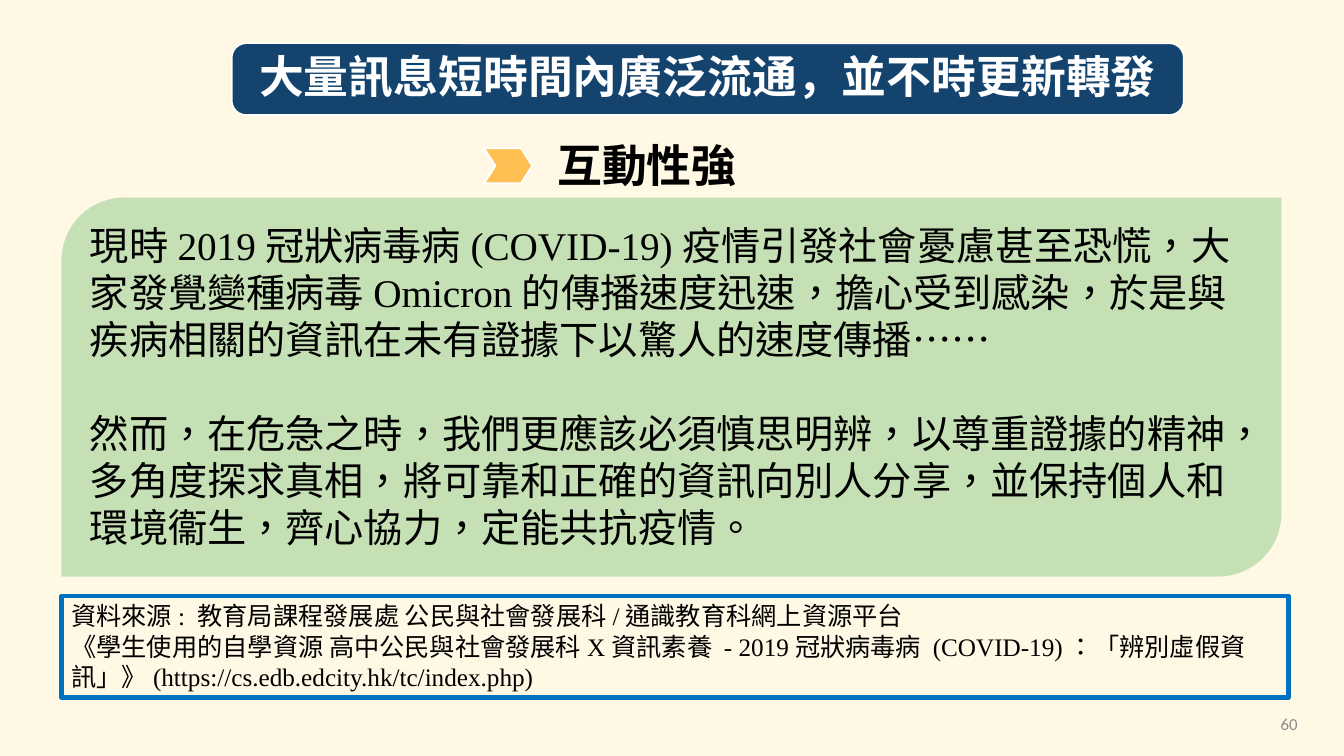
import pptx
import pptx.dml.color
import pptx.enum.lang
import pptx.enum.shapes
import pptx.enum.text
import pptx.util

RGBColor = pptx.dml.color.RGBColor
Inches = pptx.util.Inches
Pt = pptx.util.Pt
Shapes = pptx.enum.shapes.MSO_SHAPE
Align = pptx.enum.text.PP_ALIGN
Anchor = pptx.enum.text.MSO_ANCHOR
HONG_KONG = pptx.enum.lang.MSO_LANGUAGE_ID.CHINESE_HONG_KONG_SAR

CREAM = RGBColor(0xFF, 0xF8, 0xE5)
NAVY = RGBColor(0x14, 0x44, 0x6E)
GREEN = RGBColor(0xC5, 0xE0, 0xB4)
AMBER = RGBColor(0xFF, 0xBF, 0x53)
BLUE = RGBColor(0x00, 0x70, 0xC0)
GREY = RGBColor(0x8C, 0x8C, 0x8C)
WHITE = RGBColor(0xFF, 0xFF, 0xFF)
BLACK = RGBColor(0, 0, 0)

SANS, SERIF = "Lato", "Times New Roman"
LEFT_MARGIN = 0.61

SITUATION = [
    ("現時", SANS),
    ("2019冠狀病毒病(COVID-19)疫情引發社會憂慮甚至恐慌，大家發覺變種病毒Omicron的傳播速度迅速，擔心受到", SERIF),
    ("感染，於是與疾病相關的資訊在未有證據下以驚人的速度傳播……", SANS),
]
ADVICE = [("然而，在危急之時，我們更應該必須慎思明辨，以尊重證據的精神，多角度探求真相，"
           "將可靠和正確的資訊向別人分享，並保持個人和環境衞生，齊心協力，定能共抗疫情。", SANS)]
SOURCES = [
    [("資料來源: 教育局課程發展處 公民與社會發展科/通識教育科網上資源平台", SERIF)],
    [("《學生使用的自學資源 高中公民與社會發展科X資訊素養 - 2019冠狀病毒病 (COVID-19)：「辨別虛假資訊」》"
      "(https://cs.edb.edcity.hk/tc/index.php)", SERIF)],
]


def write(shape, paragraphs, size, color=BLACK, bold=False, align=Align.LEFT,
          anchor=Anchor.TOP, gap=0, line_spacing=None, margins=(0.1, 0.05),
          language=None):
    """Fill a shape with paragraphs, each a list of (text, font name) runs."""
    frame = shape.text_frame
    frame.word_wrap = True
    frame.auto_size = pptx.enum.text.MSO_AUTO_SIZE.NONE
    frame.vertical_anchor = anchor
    frame.margin_left = frame.margin_right = Inches(margins[0])
    frame.margin_top = frame.margin_bottom = Inches(margins[1])
    for index, runs in enumerate(paragraphs):
        paragraph = frame.add_paragraph() if index else frame.paragraphs[0]
        paragraph.alignment = align
        paragraph.space_before = Pt(gap if index else 0)
        if line_spacing:
            paragraph.line_spacing = line_spacing
        for text, font_name in runs:
            run = paragraph.add_run()
            run.text = text
            run.font.name = font_name
            run.font.size = Pt(size)
            run.font.bold = bold
            run.font.color.rgb = color
            if language:
                run.font.language_id = language


def panel(slide, kind, box, fill=None, line=None, line_width=1):
    shape = slide.shapes.add_shape(kind, *map(Inches, box))
    shape.shadow.inherit = False
    if fill is None:
        shape.fill.background()
    else:
        shape.fill.solid()
        shape.fill.fore_color.rgb = fill
    if line is None:
        shape.line.fill.background()
    else:
        shape.line.color.rgb = line
        shape.line.width = Pt(line_width)
    return shape


def title_banner(slide, box):
    banner = panel(slide, Shapes.ROUNDED_RECTANGLE, box, NAVY, WHITE)
    banner.adjustments[0] = 0.2
    title = slide.shapes.title
    title.left, title.top, title.width, title.height = map(Inches, box)
    # The placeholder is moved in front of its banner.
    banner.element.addnext(title.element)
    write(title, [[("大量訊息短時間內廣泛流通，並不時更新轉發", SANS)]], 32, WHITE,
          bold=True, align=Align.CENTER, anchor=Anchor.MIDDLE,
          line_spacing=0.9, margins=(0.2, 0.03))


def subheading(slide, box):
    left, top, width, height = box
    arrow = panel(slide, Shapes.CHEVRON, (left, top + 0.15, 0.48, 0.35),
                  AMBER, WHITE, 1.5)
    arrow.adjustments[0] = 0.32
    indent = 0.63
    label = slide.shapes.add_textbox(
        *map(Inches, (left + indent, top, width - indent, height)))
    write(label, [[("互動性強", SANS)]], 32, bold=True)


def message(slide, box):
    card = panel(slide, Shapes.ROUND_2_DIAG_RECTANGLE, box, GREEN)
    write(card, [SITUATION, ADVICE], 28, gap=33.6, language=HONG_KONG)


def source_note(slide, box):
    note = panel(slide, Shapes.RECTANGLE, box, line=BLUE, line_width=3)
    write(note, SOURCES, 18, language=HONG_KONG)


def page_number(slide, box):
    number = slide.shapes.add_textbox(*map(Inches, box))
    write(number, [[("60", "Calibri")]], 12, GREY,
          align=Align.RIGHT, anchor=Anchor.MIDDLE)


def main():
    deck = pptx.Presentation()
    deck.slide_width, deck.slide_height = Inches(13.33), Inches(7.5)
    slide = deck.slides.add_slide(deck.slide_layouts[5])
    slide.background.fill.solid()
    slide.background.fill.fore_color.rgb = CREAM

    title_banner(slide, (2.3, 0.43, 9.44, 0.71))
    subheading(slide, (4.8, 1.32, 3.17, 0.64))
    message(slide, (LEFT_MARGIN, 1.96, 12.1, 3.76))
    source_note(slide, (LEFT_MARGIN, 5.91, 12.17, 1.01))
    page_number(slide, (9.97, 6.98, 3, 0.4))
    deck.save("out.pptx")


if __name__ == "__main__":
    main()
